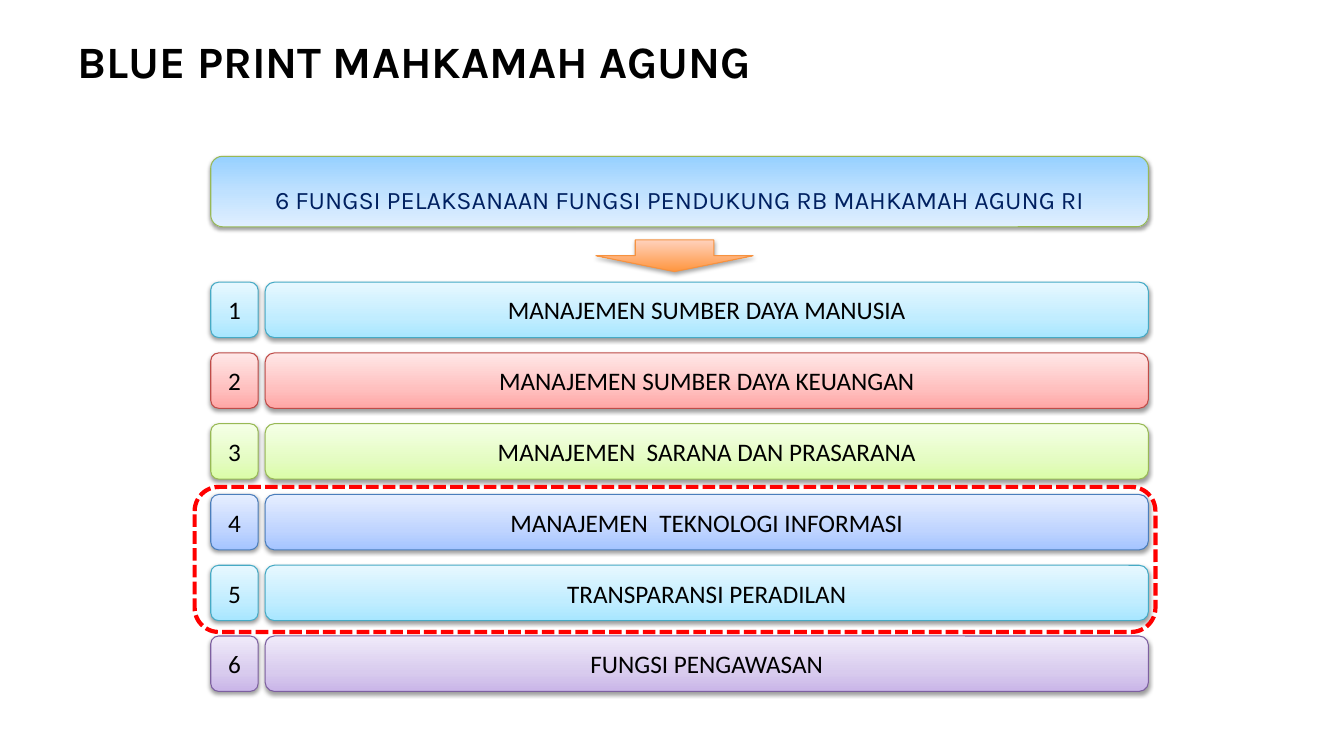
from dataclasses import dataclass

from lxml.etree import SubElement
from pptx import Presentation
from pptx.dml.color import RGBColor
from pptx.enum.dml import MSO_LINE
from pptx.enum.shapes import MSO_SHAPE
from pptx.enum.text import MSO_ANCHOR, PP_ALIGN
from pptx.oxml.ns import qn
from pptx.util import Inches, Pt

SLIDE_WIDTH, SLIDE_HEIGHT = Inches(13.33), Inches(7.5)


@dataclass(frozen=True)
class Palette:
    """Gradient stops as (percent, colour), the gradient angle and the outline."""
    stops: tuple
    line: str
    angle: int = 270


def row_palette(dark, middle, light, line):
    return Palette(((0, dark), (35, middle), (100, light)), line)


@dataclass(frozen=True)
class Theme:
    heading_font: str = "Karla"
    body_font: str = "Calibri"
    title_size: int = 32
    body_size: int = 18
    black: str = "000000"
    navy: str = "002060"
    red: str = "FF0000"
    outline: float = 0.75
    highlight_outline: float = 3
    aqua: Palette = row_palette("A7E6FF", "C1EDFF", "E7F8FF", "46AAC5")
    rose: Palette = row_palette("FFA6A5", "FFC0BF", "FFE7E7", "BF4C48")
    lime: Palette = row_palette("DAFDA7", "E4FCC2", "F5FFE7", "98B955")
    blue: Palette = row_palette("A4C4FF", "BFD4FF", "E6EEFF", "4B7EBC")
    violet: Palette = row_palette("C9B5E8", "D8CBEE", "F0EAF9", "7D60A0")
    sky: Palette = Palette(
        ((0, "96D0FF"), (50, "BFE1FF"), (100, "E0EFFF")), "98B955", 90)
    orange: Palette = Palette(((0, "FF953E"), (100, "FFD2BD")), "F69240")


THEME = Theme()


@dataclass(frozen=True)
class Box:
    """A region in percent of the slide's width and height."""
    left: float
    top: float
    width: float
    height: float

    def emu(self):
        return (round(SLIDE_WIDTH * self.left / 100),
                round(SLIDE_HEIGHT * self.top / 100),
                round(SLIDE_WIDTH * self.width / 100),
                round(SLIDE_HEIGHT * self.height / 100))


TITLE_BOX = Box(5.03, 2.93, 82.97, 10.13)
BANNER_BOX = Box(15.68, 20.67, 69.77, 9.33)
ARROW_BOX = Box(44.34, 31.73, 11.7, 4.2)
LIST_BOX = Box(15.68, 37.33, 69.77, 54.13)
ROW_HEIGHT = 7.33
NUMBER_WIDTH = 3.53
NUMBER_GAP = 0.52

FUNCTIONS = (
    ("MANAJEMEN SUMBER DAYA MANUSIA", THEME.aqua),
    ("MANAJEMEN SUMBER DAYA KEUANGAN", THEME.rose),
    ("MANAJEMEN  SARANA DAN PRASARANA", THEME.lime),
    ("MANAJEMEN  TEKNOLOGI INFORMASI", THEME.blue),
    ("TRANSPARANSI PERADILAN", THEME.aqua),
    ("FUNGSI PENGAWASAN", THEME.violet),
)
HIGHLIGHTED_ROWS = (4, 5)


def add_color(parent, color):
    return SubElement(parent, qn("a:srgbClr"), val=color)


def fill_gradient(shape, palette):
    shape.fill.gradient()
    gradient = shape._element.spPr.find(qn("a:gradFill"))
    for child in list(gradient):
        gradient.remove(child)
    stops = SubElement(gradient, qn("a:gsLst"))
    for percent, color in palette.stops:
        add_color(SubElement(stops, qn("a:gs"), pos=str(percent * 1000)), color)
    SubElement(gradient, qn("a:lin"), ang=str(palette.angle * 60000), scaled="0")


def add_soft_shadow(shape, opacity, distance):
    effects = shape._element.spPr.find(qn("a:effectLst"))
    shadow = SubElement(effects, qn("a:outerShdw"), blurRad=str(Pt(3.1)),
                        dist=str(Pt(distance)), dir="5400000", rotWithShape="0")
    SubElement(add_color(shadow, "000000"), qn("a:alpha"),
               val=str(opacity * 1000))


def add_gradient_shape(slide, preset, box, palette, opacity=38, distance=1.6):
    shape = slide.shapes.add_shape(preset, *box.emu())
    shape.shadow.inherit = False
    fill_gradient(shape, palette)
    shape.line.color.rgb = RGBColor.from_string(palette.line)
    shape.line.width = Pt(THEME.outline)
    add_soft_shadow(shape, opacity, distance)
    return shape


def write(shape, text, font, size, color, align=PP_ALIGN.CENTER, bold=False):
    frame = shape.text_frame
    frame.word_wrap = True
    frame.vertical_anchor = MSO_ANCHOR.MIDDLE
    paragraph = frame.paragraphs[0]
    paragraph.alignment = align
    run = paragraph.add_run()
    run.text = text
    run.font.name = font
    run.font.size = Pt(size)
    run.font.bold = bold
    run.font.color.rgb = RGBColor.from_string(color)
    return paragraph


def add_title(slide, box):
    write(slide.shapes.add_textbox(*box.emu()), "BLUE PRINT MAHKAMAH AGUNG",
          THEME.heading_font, THEME.title_size, THEME.black,
          PP_ALIGN.LEFT, bold=True)


def add_banner(slide, box):
    banner = add_gradient_shape(slide, MSO_SHAPE.ROUNDED_RECTANGLE, box, THEME.sky)
    heading = write(banner,
                    "6 FUNGSI PELAKSANAAN FUNGSI PENDUKUNG RB MAHKAMAH AGUNG RI",
                    THEME.heading_font, THEME.body_size, THEME.navy)
    heading.line_spacing = 1.5


def add_arrow(slide, box):
    add_gradient_shape(slide, MSO_SHAPE.DOWN_ARROW, box, THEME.orange, 35, 1.8)


def add_function_row(slide, box, number, label, palette):
    label_offset = NUMBER_WIDTH + NUMBER_GAP
    label_box = Box(box.left + label_offset, box.top,
                    box.width - label_offset, box.height)
    number_box = Box(box.left, box.top, NUMBER_WIDTH, box.height)
    for part_box, text in ((label_box, label), (number_box, str(number))):
        part = add_gradient_shape(
            slide, MSO_SHAPE.ROUNDED_RECTANGLE, part_box, palette)
        write(part, text, THEME.body_font, THEME.body_size, THEME.black)


def add_highlight(slide, box):
    """Dashed frame reaching slightly beyond the rows in the box."""
    frame_box = Box(box.left - 1.2, box.top - 1, box.width + 1.72, box.height + 2.5)
    frame = slide.shapes.add_shape(MSO_SHAPE.ROUNDED_RECTANGLE, *frame_box.emu())
    frame.shadow.inherit = False
    frame.fill.background()
    frame.line.color.rgb = RGBColor.from_string(THEME.red)
    frame.line.width = Pt(THEME.highlight_outline)
    frame.line.dash_style = MSO_LINE.SQUARE_DOT


def add_function_list(slide, box):
    pitch = (box.height - ROW_HEIGHT) / (len(FUNCTIONS) - 1)
    for index, (label, palette) in enumerate(FUNCTIONS):
        row_box = Box(box.left, box.top + index * pitch, box.width, ROW_HEIGHT)
        add_function_row(slide, row_box, index + 1, label, palette)
    first, last = HIGHLIGHTED_ROWS
    add_highlight(slide, Box(box.left, box.top + (first - 1) * pitch,
                             box.width, (last - first) * pitch + ROW_HEIGHT))


def main():
    presentation = Presentation()
    presentation.slide_width = SLIDE_WIDTH
    presentation.slide_height = SLIDE_HEIGHT
    slide = presentation.slides.add_slide(presentation.slide_layouts[6])
    add_title(slide, TITLE_BOX)
    add_banner(slide, BANNER_BOX)
    add_arrow(slide, ARROW_BOX)
    add_function_list(slide, LIST_BOX)
    presentation.save("out.pptx")


if __name__ == "__main__":
    main()
